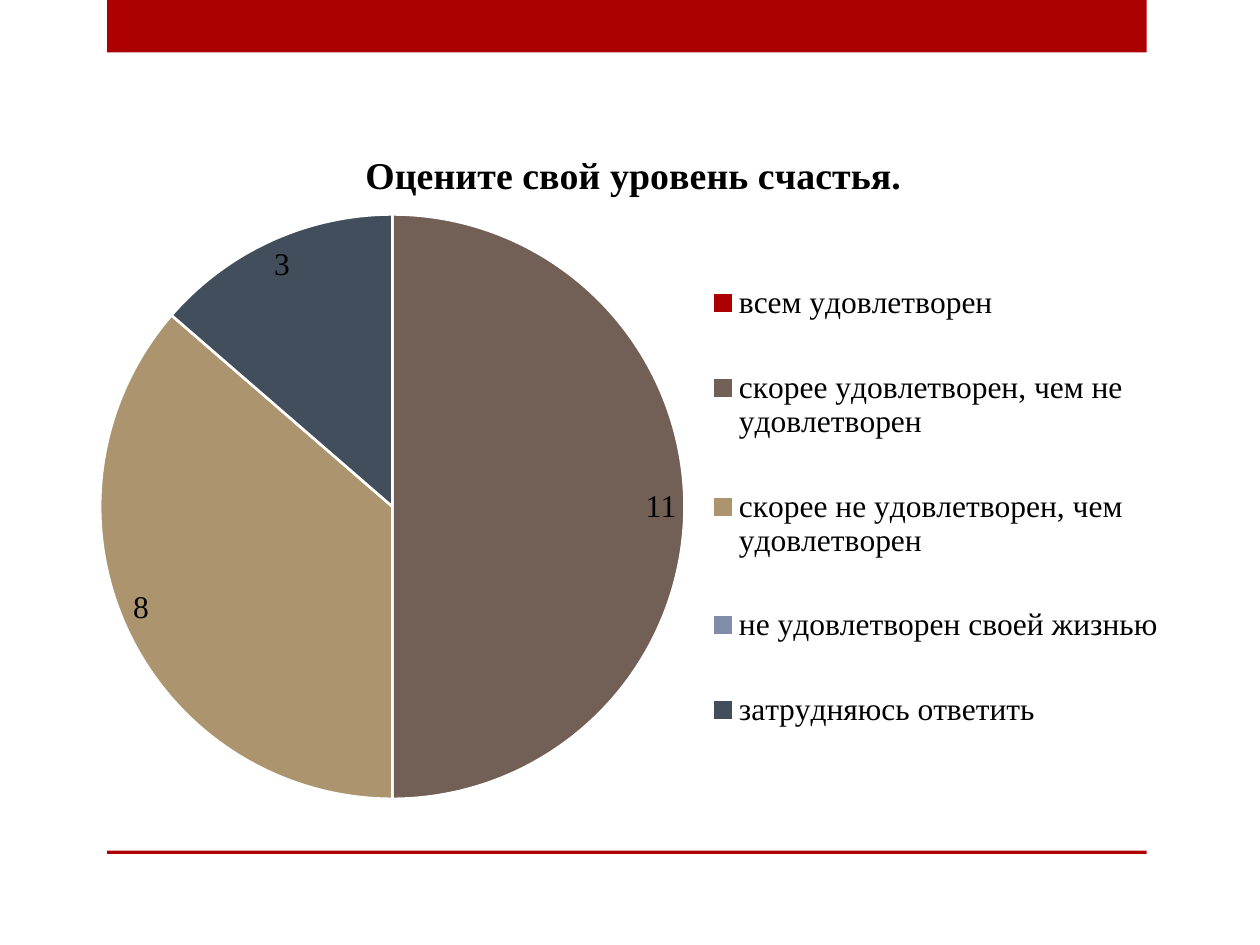
import pptx
import pptx.chart.data
import pptx.dml.color
import pptx.enum.chart
import pptx.enum.shapes
import pptx.oxml
import pptx.util
from pptx.util import Pt

THEME = {
    "font": "Times New Roman",
    "text": "000000",
    "accent": "AD0101",
    "border": "FFFFFF",
    "title_size": 21.6,
    "body_size": 18,
}


def format_font(font, size, bold=False):
    values = {"name": THEME["font"], "size": Pt(size), "bold": bold}
    for attribute, value in values.items():
        setattr(font, attribute, value)
    font.color.rgb = pptx.dml.color.RGBColor.from_string(THEME["text"])


def place(element, successors, target="", **fractions):
    """Give a chart part a manual layout in fractions of the chart."""
    element.remove_all("c:layout")
    inner = f'<c:layoutTarget val="{target}"/>' if target else ""
    inner += "".join(f'<c:{axis}Mode val="edge"/>' for axis in "xy")
    inner += "".join(f'<c:{key} val="{value}"/>' for key, value in fractions.items())
    namespace = "http://schemas.openxmlformats.org/drawingml/2006/chart"
    layout = pptx.oxml.parse_xml(
        f'<c:layout xmlns:c="{namespace}"><c:manualLayout>{inner}</c:manualLayout></c:layout>')
    element.insert_element_before(layout, *successors)


presentation = pptx.Presentation()
presentation.slide_width, presentation.slide_height = Pt(720), Pt(540)
slide = presentation.slides.add_slide(presentation.slide_layouts[6])

# Top band and bottom rule
for top, height in ((0, 30), (486, 2)):
    band = slide.shapes.add_shape(
        pptx.enum.shapes.MSO_SHAPE.RECTANGLE, Pt(61.2), Pt(top), Pt(594), Pt(height))
    band.shadow.inherit = False
    band.fill.solid()
    band.fill.fore_color.rgb = pptx.dml.color.RGBColor.from_string(THEME["accent"])
    band.line.fill.background()

# Survey answers: category, count, colour
answers = [
    ("всем удовлетворен", None, THEME["accent"]),
    ("скорее удовлетворен, чем не удовлетворен", 11, "726056"),
    ("скорее не удовлетворен, чем удовлетворен", 8, "AC956E"),
    ("не удовлетворен своей жизнью", None, "808DA9"),
    ("затрудняюсь ответить", 3, "424E5B"),
]
chart_data = pptx.chart.data.CategoryChartData()
chart_data.categories = [category for category, count, color in answers]
chart_data.add_series("Series 1", [count for category, count, color in answers])

# Pie chart
chart = slide.shapes.add_chart(
    pptx.enum.chart.XL_CHART_TYPE.PIE,
    Pt(36.7), Pt(66.2), Pt(646.6), Pt(402.5), chart_data).chart
format_font(chart.font, THEME["body_size"])
plot = chart.plots[0]
plot.vary_by_categories = True
for index, (category, count, color) in enumerate(answers):
    point = plot.series[0].points[index]
    point.format.fill.solid()
    point.format.fill.fore_color.rgb = pptx.dml.color.RGBColor.from_string(color)
    point.format.line.color.rgb = pptx.dml.color.RGBColor.from_string(THEME["border"])
    point.format.line.width = Pt(1.5)

# Value labels
plot.has_data_labels = True
label_format = {
    "show_value": True,
    "show_percentage": False,
    "position": pptx.enum.chart.XL_LABEL_POSITION.INSIDE_END,
}
for attribute, value in label_format.items():
    setattr(plot.data_labels, attribute, value)
format_font(plot.data_labels.font, THEME["body_size"])

# Title
chart.has_title = True
paragraph = chart.chart_title.text_frame.paragraphs[0]
run = paragraph.add_run()
run.text = "Оцените свой уровень счастья."
format_font(run.font, THEME["title_size"], bold=True)
chart.chart_title.include_in_layout = False

# Legend
chart.has_legend = True
chart.legend.position = pptx.enum.chart.XL_LEGEND_POSITION.RIGHT
chart.legend.include_in_layout = False
format_font(chart.legend.font, THEME["body_size"])

# Placement of the chart parts
chart_element = chart.element.chart
place(chart_element.plotArea, ("c:pieChart",), "inner", x=0.03, y=0.14, w=0.52, h=0.83)
place(chart.chart_title._element, ("c:overlay", "c:spPr", "c:txPr"), x=0.26, y=0.04)
place(chart.legend._element, ("c:overlay", "c:spPr", "c:txPr"), x=0.56, y=0.17, w=0.42, h=0.77)

presentation.save("out.pptx")
